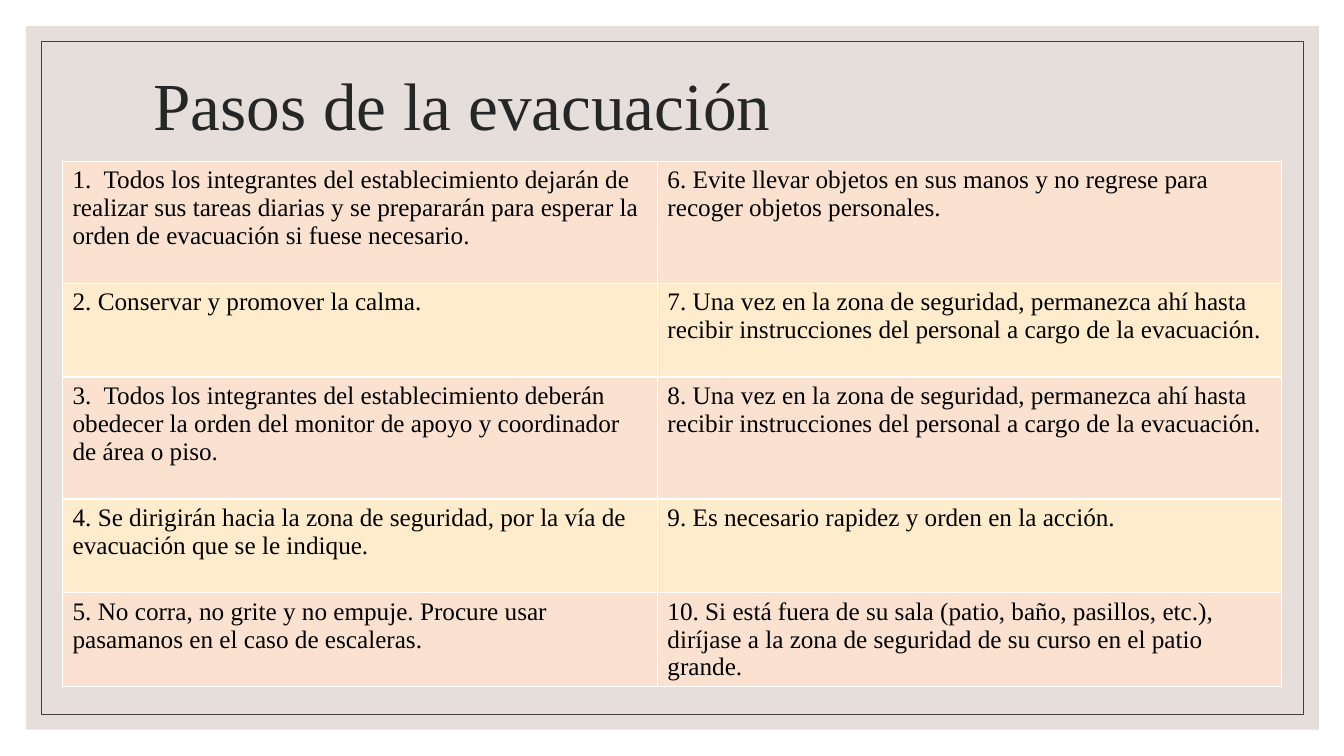
from lxml import etree
from pptx import Presentation
from pptx.dml.color import RGBColor
from pptx.enum.shapes import MSO_SHAPE
from pptx.enum.text import MSO_ANCHOR, MSO_AUTO_SIZE, PP_ALIGN
from pptx.oxml.ns import qn
from pptx.util import Inches, Pt

RECT = MSO_SHAPE.RECTANGLE
MIDDLE = MSO_ANCHOR.MIDDLE
TOP = MSO_ANCHOR.TOP
NO_FIT = MSO_AUTO_SIZE.NONE
LEFT = PP_ALIGN.LEFT
TITLE_ONLY = 5

COLORS = {
    "panel": "E5DEDB",
    "frame": "404040",
    "title": "262626",
    "text": "000000",
    "border": "FFFFFF",
    "peach": "FBE2D0",
    "cream": "FFECCC",
}
FONT = "Times New Roman"
TITLE_FONT = {"name": FONT, "size": Pt(48), "bold": False}
CELL_FONT = {"name": FONT, "size": Pt(18), "bold": False}
COL_WIDTHS = [5.9, 6.19]
TALL, SHORT = 1.21, 0.93
ROW_HEIGHTS = [TALL, SHORT, TALL, SHORT, SHORT]
STEPS = [
    "1.  Todos los integrantes del establecimiento dejarán de realizar sus tareas "
    "diarias y se prepararán para esperar la orden de evacuación si fuese necesario.",
    "2. Conservar y promover la calma.",
    "3.  Todos los integrantes del establecimiento deberán obedecer la orden del "
    "monitor de apoyo y coordinador de área o piso.",
    "4. Se dirigirán hacia la zona de seguridad, por la vía de evacuación que se le indique.",
    "5. No corra, no grite y no empuje. Procure usar pasamanos en el caso de escaleras.",
    "6. Evite llevar objetos en sus manos y no regrese para recoger objetos personales.",
    "7. Una vez en la zona de seguridad, permanezca ahí hasta recibir instrucciones "
    "del personal a cargo de la evacuación.",
    "8. Una vez en la zona de seguridad, permanezca ahí hasta recibir instrucciones "
    "del personal a cargo de la evacuación.",
    "9. Es necesario rapidez y orden en la acción.",
    "10. Si está fuera de su sala (patio, baño, pasillos, etc.), diríjase a la zona "
    "de seguridad de su curso en el patio grande.",
]


def rgb(key):
    """Return the named colour."""
    return RGBColor.from_string(COLORS[key])


def format_text(p, font, color):
    """Apply font values and a colour to a paragraph's runs."""
    p.alignment = LEFT
    for r in p.runs:
        for name, value in font.items():
            setattr(r.font, name, value)
        r.font.color.rgb = rgb(color)


def add_backdrop(slide, x, y, w, h):
    """Place the tinted panel with the thin frame inside it."""
    inset = 0.15
    panel = slide.shapes.add_shape(RECT, Inches(x), Inches(y), Inches(w), Inches(h))
    panel.fill.solid()
    panel.fill.fore_color.rgb = rgb("panel")
    panel.line.fill.background()
    frame = slide.shapes.add_shape(
        RECT, Inches(x + inset), Inches(y + inset),
        Inches(w - 2 * inset), Inches(h - 2 * inset))
    frame.fill.background()
    frame.line.color.rgb = rgb("frame")
    frame.line.width = Pt(0.5)
    for sp in (panel, frame):
        sp.shadow.inherit = False


def set_title(slide, text, x, y, w, h):
    """Format the title placeholder and bring it in front of the backdrop."""
    sp = slide.shapes.title
    box = {"left": x, "top": y, "width": w, "height": h}
    for name, value in box.items():
        setattr(sp, name, Inches(value))
    sp.element.getparent().append(sp.element)
    tf = sp.text_frame
    tf.text = text
    tf.word_wrap = True
    tf.auto_size = NO_FIT
    tf.vertical_anchor = MIDDLE
    p = tf.paragraphs[0]
    p.line_spacing = 0.9
    format_text(p, TITLE_FONT, "title")


def set_borders(cell):
    """Draw a thin line on the four sides of a cell."""
    props = cell._tc.get_or_add_tcPr()
    for side in ("a:lnL", "a:lnR", "a:lnT", "a:lnB"):
        ln = etree.SubElement(props, qn(side), w=str(Pt(1)))
        fill = etree.SubElement(ln, qn("a:solidFill"))
        etree.SubElement(fill, qn("a:srgbClr"), val=COLORS["border"])


def add_steps_table(slide, x, y):
    """Place the steps in two columns, numbered downwards, with banded rows."""
    n_rows, n_cols = len(ROW_HEIGHTS), len(COL_WIDTHS)
    table = slide.shapes.add_table(
        n_rows, n_cols, Inches(x), Inches(y),
        Inches(sum(COL_WIDTHS)), Inches(sum(ROW_HEIGHTS))).table
    table.first_row = False
    table.horz_banding = False
    for col, width in zip(table.columns, COL_WIDTHS):
        col.width = Inches(width)
    for row, height in zip(table.rows, ROW_HEIGHTS):
        row.height = Inches(height)
    for i, step in enumerate(STEPS):
        col, row = divmod(i, n_rows)
        cell = table.cell(row, col)
        cell.text = step
        cell.vertical_anchor = TOP
        set_borders(cell)
        cell.fill.solid()
        cell.fill.fore_color.rgb = rgb("cream" if row % 2 else "peach")
        format_text(cell.text_frame.paragraphs[0], CELL_FONT, "text")


def main():
    """Build the slide and save it."""
    prs = Presentation()
    prs.slide_width, prs.slide_height = Inches(13.33), Inches(7.5)
    slide = prs.slides.add_slide(prs.slide_layouts[TITLE_ONLY])
    add_backdrop(slide, 0.26, 0.26, 12.82, 6.98)
    set_title(slide, "Pasos de la evacuación", 1.42, 0.36, 10.5, 1.43)
    add_steps_table(slide, 0.62, 1.6)
    prs.save("out.pptx")


if __name__ == "__main__":
    main()
